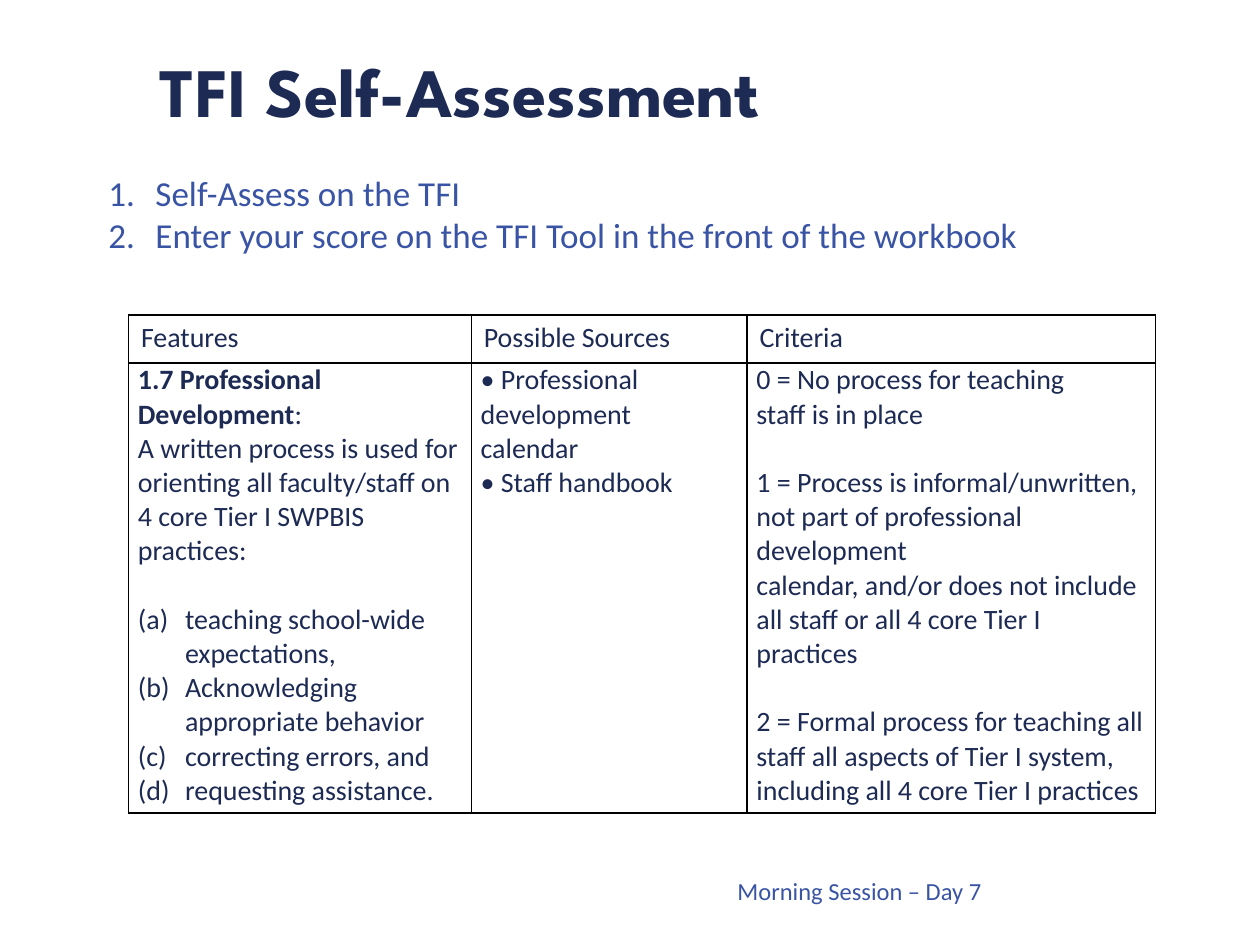
from dataclasses import dataclass

from pptx import Presentation
from pptx.dml.color import RGBColor
from pptx.enum.text import MSO_ANCHOR as Anchor, MSO_AUTO_SIZE as Fit, PP_ALIGN as Align
from pptx.oxml import parse_xml
from pptx.oxml.ns import nsdecls
from pptx.util import Cm, Pt

NAVY = RGBColor(0x1D, 0x2A, 0x53)
BLUE = RGBColor(0x3A, 0x54, 0xA5)
HANG = Cm(0.95)
GAP = 19.5  # one blank line of table text, in points


@dataclass
class Para:
    text: str
    lead: str = ""  # bold words before the text
    num: str = ""  # automatic numbering scheme
    gap: float = 0


@dataclass
class Column:
    head: str
    width: float
    paras: list[Para]


COLUMNS = [
    Column("Features", 6.91, [
        Para(":", lead="1.7 Professional Development"),
        Para("A written process is used for orienting all faculty/staff on "
             "4 core Tier I SWPBIS practices:"),
        Para("teaching school-wide expectations,", num="alphaLcParenBoth", gap=GAP),
        Para("Acknowledging appropriate behavior", num="alphaLcParenBoth"),
        Para("correcting errors, and", num="alphaLcParenBoth"),
        Para("requesting assistance.", num="alphaLcParenBoth"),
    ]),
    Column("Possible Sources", 5.56, [
        Para("• Professional development"),
        Para("calendar"),
        Para("• Staff handbook"),
    ]),
    Column("Criteria", 8.23, [
        Para("0 = No process for teaching"),
        Para("staff is in place"),
        Para("1 = Process is informal/unwritten, not part of professional development",
             gap=GAP),
        Para("calendar, and/or does not include all staff or all 4 core Tier I practices"),
        Para("2 = Formal process for teaching all staff all aspects of Tier I system, "
             "including all 4 core Tier I practices", gap=GAP),
    ]),
]


def write(frame, paras: list[Para], *, size: float, color: RGBColor,
          font: str = "Calibri", bold: bool = False, align=Align.LEFT) -> None:
    """Fill a text frame with formatted paragraphs."""
    frame.word_wrap = True
    for i, para in enumerate(paras):
        p = frame.paragraphs[0] if i == 0 else frame.add_paragraph()
        if para.num:
            props = p._p.get_or_add_pPr()
            props.set("marL", str(HANG))
            props.set("indent", str(-HANG))
            props.append(parse_xml(f'<a:buAutoNum {nsdecls("a")} type="{para.num}"/>'))
        p.alignment = align
        p.space_before = Pt(para.gap)
        for text, strong in ((para.lead, True), (para.text, bold)):
            if text:
                run = p.add_run()
                run.text = text
                run.font.name = font
                run.font.size = Pt(size)
                run.font.bold = strong
                run.font.color.rgb = color


def place(shape, left: float, top: float, width: float, height: float) -> None:
    shape.left, shape.top = Cm(left), Cm(top)
    shape.width, shape.height = Cm(width), Cm(height)


def border(cell) -> None:
    """Draw a thin black line on all four sides of a cell."""
    props = cell._tc.get_or_add_tcPr()
    for i, side in enumerate("LRTB"):
        props.insert(i, parse_xml(
            f'<a:ln{side} {nsdecls("a")} w="{Pt(1)}"><a:solidFill>'
            f'<a:srgbClr val="000000"/></a:solidFill></a:ln{side}>'))


def add_grid(slide, left: float, top: float, heights: tuple[float, float]) -> None:
    width = sum(col.width for col in COLUMNS)
    grid = slide.shapes.add_table(2, len(COLUMNS), Cm(left), Cm(top),
                                  Cm(width), Cm(sum(heights))).table
    grid.first_row = grid.horz_banding = False
    for row, height in zip(grid.rows, heights):
        row.height = Cm(height)
    for c, col in enumerate(COLUMNS):
        grid.columns[c].width = Cm(col.width)
        for r, paras in enumerate(([Para(col.head)], col.paras)):
            cell = grid.cell(r, c)
            cell.fill.background()
            border(cell)
            if r == 1:
                cell.margin_left = cell.margin_right = Cm(0.19)
                cell.margin_top = cell.margin_bottom = 0
            write(cell.text_frame, paras, size=16, color=NAVY)


def main() -> None:
    deck = Presentation()
    deck.slide_width, deck.slide_height = Cm(25.4), Cm(19.05)
    slide = deck.slides.add_slide(deck.slide_layouts[1])

    # Title
    title = slide.shapes.title
    place(title, 2.97, 0.81, 20.73, 2.01)
    title.text_frame.auto_size = Fit.NONE
    title.text_frame.vertical_anchor = Anchor.MIDDLE
    write(title.text_frame, [Para("TFI Self-Assessment")], size=39.6,
          color=NAVY, font="League Spartan", bold=True)

    # Numbered steps
    body = slide.placeholders[1]
    place(body, 1.93, 3.33, 18.92, 1.96)
    body.text_frame.auto_size = Fit.NONE
    steps = ["Self-Assess on the TFI",
             "Enter your score on the TFI Tool in the front of the workbook"]
    write(body.text_frame, [Para(step, num="arabicPeriod") for step in steps],
          size=20, color=BLUE)

    # Scoring table
    add_grid(slide, 2.59, 6.35, (0.97, 9.07))

    # Session label
    label = slide.shapes.add_textbox(Cm(5.89), Cm(17.53), Cm(14.15), Cm(0.86))
    write(label.text_frame, [Para("Morning Session – Day 7")], size=14,
          color=BLUE, align=Align.RIGHT)

    deck.save("out.pptx")


if __name__ == "__main__":
    main()
